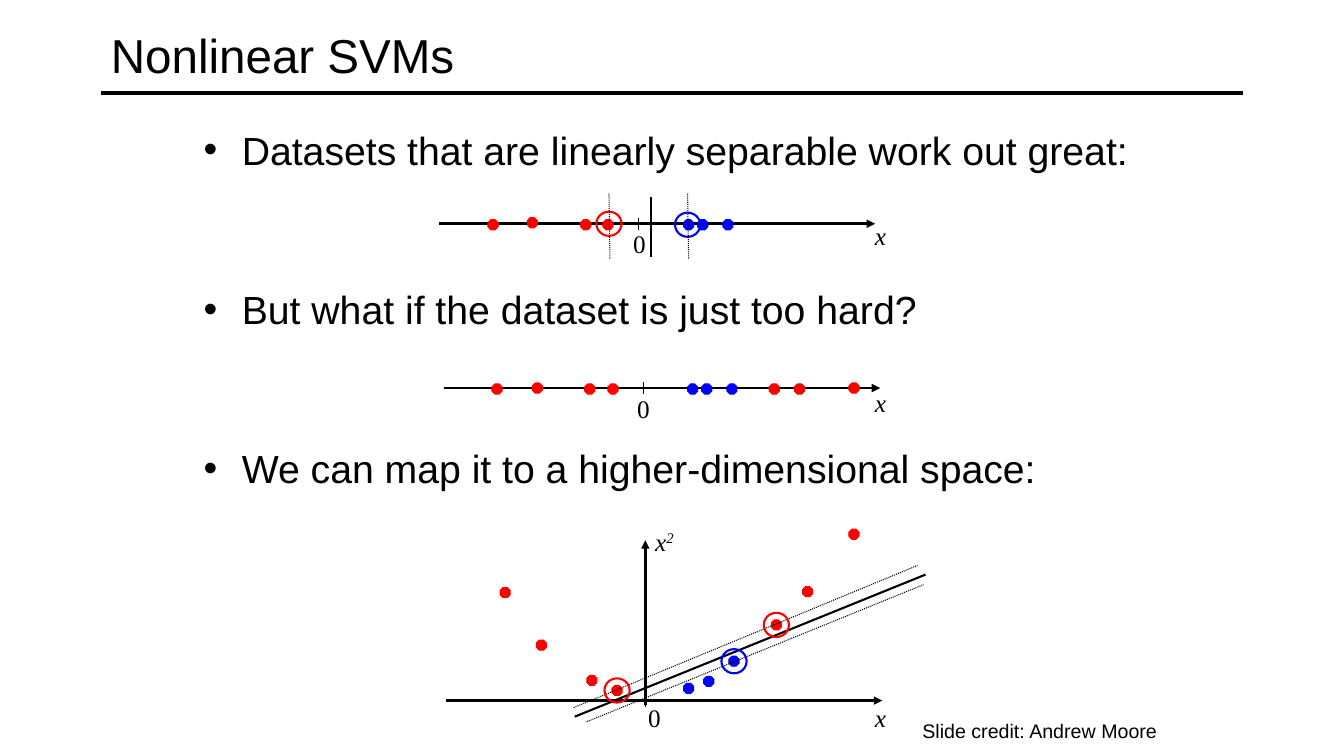
from pptx import Presentation
from pptx.dml.color import RGBColor
from pptx.enum.dml import MSO_LINE_DASH_STYLE as Dash
from pptx.enum.shapes import MSO_CONNECTOR as Connector, MSO_SHAPE as Preset
from pptx.enum.text import MSO_ANCHOR as Anchor, MSO_AUTO_SIZE as AutoSize, PP_ALIGN as Align
from pptx.oxml.ns import qn
from pptx.util import Inches, Pt
from lxml.etree import SubElement

BLACK, RED, BLUE = "000000", "FF0000", "0000FF"
SANS, SERIF = "Arial", "Times New Roman"


def color(hex_text):
    return RGBColor.from_string(hex_text)


def grid(*cells):
    """Turn columns and rows of a 0.1 inch grid into lengths."""
    return [Inches(cell / 10) for cell in cells]


def add_run(paragraph, text, font=SANS, size=18, italic=False, superscript=False):
    run = paragraph.add_run()
    run.text = text
    run.font.name, run.font.size = font, Pt(size)
    run.font.italic = italic
    run.font.color.rgb = color(BLACK)
    if superscript:
        run._r.get_or_add_rPr().set("baseline", "30000")


class SlideBuilder:
    def __init__(self, presentation):
        self.slide = presentation.slides.add_slide(presentation.slide_layouts[5])

    def title(self, text, box):
        shape = self.slide.shapes.title
        shape.left, shape.top, shape.width, shape.height = grid(*box)
        frame = shape.text_frame
        frame.auto_size, frame.vertical_anchor = AutoSize.NONE, Anchor.MIDDLE
        frame.paragraphs[0].alignment = Align.LEFT
        add_run(frame.paragraphs[0], text, size=34)

    def text_frame(self, box, wrap=True):
        frame = self.slide.shapes.add_textbox(*grid(*box)).text_frame
        frame.word_wrap = wrap
        return frame

    def label(self, text, box, exponent="", wrap=True, **style):
        paragraph = self.text_frame(box, wrap).paragraphs[0]
        add_run(paragraph, text, **style)
        if exponent:
            add_run(paragraph, exponent, superscript=True, **style)

    def bullets(self, items, box, gap):
        frame = self.text_frame(box)
        for index, item in enumerate(items):
            paragraph = frame.add_paragraph() if index else frame.paragraphs[0]
            paragraph.space_before = Pt(gap if index else 0)
            properties = paragraph._p.get_or_add_pPr()
            properties.set("marL", str(Inches(0.38)))
            properties.set("indent", str(-Inches(0.38)))
            SubElement(properties, qn("a:buFont")).set("typeface", SANS)
            SubElement(properties, qn("a:buChar")).set("char", "•")
            add_run(paragraph, item, size=28)

    def line(self, start, end, width=0.75, dotted=False, arrow=False):
        connector = self.slide.shapes.add_connector(Connector.STRAIGHT, *grid(*start, *end))
        connector.line.color.rgb = color(BLACK)
        connector.line.width = Pt(width)
        if dotted:
            connector.line.dash_style = Dash.ROUND_DOT
        if arrow:
            SubElement(connector.line._get_or_add_ln(), qn("a:tailEnd")).set("type", "triangle")
        SubElement(connector._element.spPr, qn("a:effectLst"))

    def marks(self, preset, centers, hex_text, width, height, line_width, filled):
        for x, y in centers:
            box = grid(x - width / 2, y - height / 2, width, height)
            shape = self.slide.shapes.add_shape(preset, *box)
            shape.shadow.inherit = False
            shape.line.color.rgb = color(hex_text)
            shape.line.width = Pt(line_width)
            if filled:
                shape.fill.solid()
                shape.fill.fore_color.rgb = color(hex_text)
            else:
                shape.fill.background()

    def dots(self, centers, hex_text):
        self.marks(Preset.OCTAGON, centers, hex_text, 1, 1, 0.75, True)

    def rings(self, centers, hex_text):
        self.marks(Preset.OVAL, centers, hex_text, 2.5, 2.4, 1.5, False)

    def axis(self, left, y, zero_at, x_label_top):
        zero = left + 19.8
        self.line((left, y), (left + 43.3, y), width=2, arrow=True)
        self.line((zero, y - 0.6), (zero, y + 0.6))
        self.label("0", (*zero_at, 3.8, 4), font=SERIF)
        self.label("x", (85.8, x_label_top, 5, 4), font=SERIF, italic=True)


def main():
    presentation = Presentation()
    presentation.slide_width, presentation.slide_height = Inches(13.33), Inches(7.5)
    builder = SlideBuilder(presentation)

    # Title, rule and bullets
    builder.title("Nonlinear SVMs", (10, 0.8, 113.3, 9.2))
    builder.line((10, 9.2), (123.3, 9.2), width=3)
    builder.bullets(
        [
            "Datasets that are linearly separable work out great:",
            "But what if the dataset is just too hard?",
            "We can map it to a higher-dimensional space:",
        ],
        (19.2, 12, 95.8, 36),
        gap=80,
    )

    # Separable dataset with its boundary and margins
    builder.axis(43.5, 22.2, (61.8, 22.2), 21.4)
    builder.dots([(48.9, 22.3), (52.8, 22.1), (58.1, 22.3), (60.3, 22.3)], RED)
    builder.dots([(x, 22.3) for x in (68.3, 69.7, 72.2)], BLUE)
    builder.rings([(60.4, 22.2)], RED)
    builder.rings([(68.2, 22.3)], BLUE)
    builder.line((64.6, 19.5), (64.6, 25.5), width=1.5)
    for margin in (60.4, 68.2):
        builder.line((margin, 19.2), (margin + 0.1, 25.7), dotted=True)

    # Dataset that no single threshold separates
    builder.axis(44, 38.5, (62.2, 38.5), 37.9)
    builder.dots([(x, 38.6) for x in (49.3, 58.5, 60.8, 76.8, 79.3)], RED)
    builder.dots([(x, 38.5) for x in (53.3, 84.7)], RED)
    builder.dots([(x, 38.6) for x in (68.7, 70.1, 72.6)], BLUE)

    # Dataset mapped to two dimensions
    builder.axis(44.2, 69.5, (63.3, 69.2), 69.2)
    builder.line((64, 69.9), (64, 53.6), width=2, arrow=True)
    builder.label("x", (64, 51.7, 5, 4), exponent="2", font=SERIF, italic=True)
    red_supports = [(61.2, 68.5), (77, 62)]
    blue_supports = [(72.8, 65.6)]
    red_others = [(50.1, 58.8), (53.7, 64), (58.7, 67.5), (80.1, 58.7), (84.7, 53)]
    builder.dots(red_others + red_supports, RED)
    builder.dots([(68.3, 68.3), (70.3, 67.6)] + blue_supports, BLUE)
    builder.line((57, 71.1), (91.8, 57), width=1.5)
    builder.line((56.9, 70.2), (91, 56.1), dotted=True)
    builder.line((58.2, 71.6), (91.6, 58), dotted=True)
    builder.rings(red_supports, RED)
    builder.rings(blue_supports, BLUE)

    # Credit
    builder.label("Slide credit: Andrew Moore", (90.5, 70.8, 25.3, 3.3), wrap=False, size=14)

    presentation.save("out.pptx")


if __name__ == "__main__":
    main()
